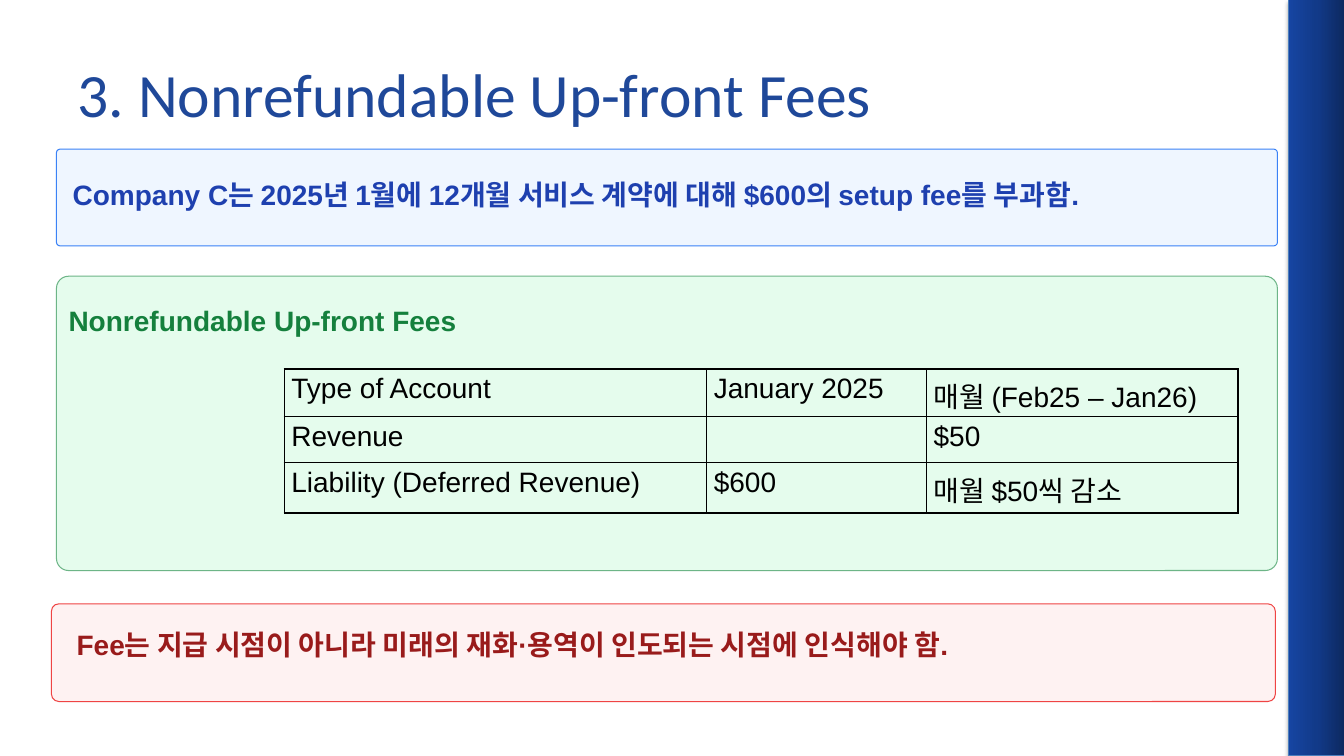
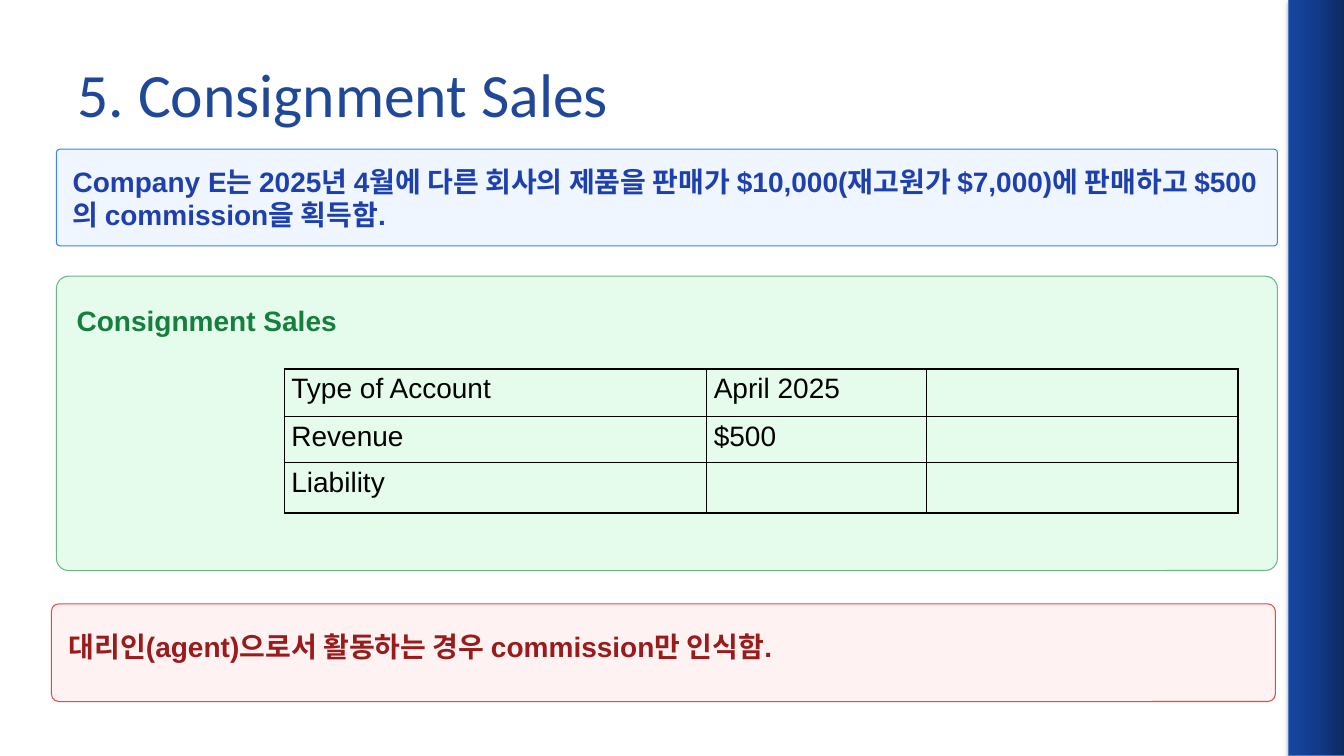
"""Build two slides on revenue recognition cases."""
from copy import deepcopy

from lxml import etree
from pptx import Presentation
from pptx.dml.color import RGBColor
from pptx.enum.shapes import MSO_SHAPE
from pptx.enum.text import MSO_ANCHOR
from pptx.oxml import parse_xml
from pptx.util import Pt

RECT, ROUND = MSO_SHAPE.RECTANGLE, MSO_SHAPE.ROUNDED_RECTANGLE
TOP, MIDDLE = MSO_ANCHOR.TOP, MSO_ANCHOR.MIDDLE
NS = "http://schemas.openxmlformats.org/drawingml/2006/main"
PX = 9144

THEME = {
    "title": {"name": "Calibri", "size": 44, "color": "1F4899", "bold": False},
    "fact": {"name": "Arial", "size": 20, "color": "1E40AF", "bold": True},
    "head": {"name": "Arial", "size": 20, "color": "15803D", "bold": True},
    "note": {"name": "Arial", "size": 20, "color": "991B1B", "bold": True},
    "cell": {"name": "Arial", "size": 20, "color": "000000", "bold": False},
    "bar": ("0D2960", "123A89", "1645A2"),
    "edge": "4B7EBC",
    "grid": "000000",
    "lead": Pt(22.4),
}

CARDS = [
    ((56, 148, 1211, 96), 0.037, "EFF6FF", "3B82F6"),
    ((56, 274, 1211, 292), 0.041, "E5FCED", "6DB587"),
    ((51, 599, 1214, 97), 0.078, "FEF2F2", "EF4444"),
]
COLS, ROWS = (419, 218, 309), (47, 46, 50)

SLIDES = [
    {
        "title": "3. Nonrefundable Up-front Fees",
        "texts": [
            ("fact", "Company C는 2025년 1월에 12개월 서비스 계약에 대해 $600의 setup fee를 부과함.",
             (72, 178, 1186, 34), THEME["lead"]),
            ("head", "Nonrefundable Up-front Fees", (68, 303, 1186, 34), THEME["lead"]),
            ("note", "Fee는 지급 시점이 아니라 미래의 재화·용역이 인도되는 시점에 인식해야 함.",
             (76, 625, 1175, 80), THEME["lead"]),
        ],
        "table": [
            ("Type of Account", "January 2025", "매월 (Feb25 – Jan26)"),
            ("Revenue", "", "$50"),
            ("Liability (Deferred Revenue)", "$600", "매월 $50씩 감소"),
        ],
    },
    {
        "title": "5. Consignment Sales",
        "texts": [
            ("fact", "Company E는 2025년 4월에 다른 회사의 제품을 판매가 $10,000(재고원가 $7,000)에 "
             "판매하고 $500의 commission을 획득함.", (72, 163, 1186, 96), None),
            ("head", "Consignment Sales", (76, 303, 1178, 34), THEME["lead"]),
            ("note", "대리인(agent)으로서 활동하는 경우 commission만 인식함.",
             (68, 625, 1183, 80), None),
        ],
        "table": [
            ("Type of Account", "April 2025", ""),
            ("Revenue", "$500", ""),
            ("Liability", "", ""),
        ],
    },
]


def rgb(code):
    return RGBColor.from_string(code)


def scale(box):
    return [n * PX for n in box]


def style(font, look):
    values = {"name": look["name"], "size": Pt(look["size"]), "bold": look["bold"]}
    for key, value in values.items():
        setattr(font, key, value)
    font.color.rgb = rgb(look["color"])


def write(para, text, look, **form):
    for key, value in form.items():
        setattr(para, key, value)
    if text:
        run = para.add_run()
        run.text = text
        style(run.font, look)


def label(slide, text, box, look, lead=None, pad=(0, 0), anchor=TOP):
    frame = slide.shapes.add_textbox(*scale(box)).text_frame
    side, end = (n * PX for n in pad)
    form = {"word_wrap": True, "vertical_anchor": anchor, "margin_left": side,
            "margin_right": side, "margin_top": end, "margin_bottom": end}
    for key, value in form.items():
        setattr(frame, key, value)
    write(frame.paragraphs[0], text, look, line_spacing=lead)


def panel(slide, kind, box, edge):
    shape = slide.shapes.add_shape(kind, *scale(box))
    shape.shadow.inherit = False
    shape.line.color.rgb = rgb(edge)
    shape.line.width = Pt(0.75)
    return shape


def side_bar(slide):
    bar = panel(slide, RECT, (1278, 0, 56, 750), THEME["edge"])
    bar.fill.gradient()
    bar.fill.gradient_angle = 180
    stops = bar.fill.gradient_stops
    first = bar._element.find(f".//{{{NS}}}gs")
    first.addnext(deepcopy(first))
    stops = bar.fill.gradient_stops
    for stop, place, code in zip(stops, (0, 0.5, 1), THEME["bar"]):
        stop.position = place
        stop.color.rgb = rgb(code)
    glow = bar._element.spPr.find(f"{{{NS}}}effectLst")
    glow.append(parse_xml(
        f'<a:outerShdw xmlns:a="{NS}" blurRad="{Pt(3.1)}" dist="{Pt(1.8)}" dir="5400000" '
        'rotWithShape="0"><a:srgbClr val="000000"><a:alpha val="35000"/></a:srgbClr>'
        '</a:outerShdw>'))


def border(cell):
    props = cell._tc.get_or_add_tcPr()
    for spot, side in enumerate(("lnL", "lnR", "lnT", "lnB")):
        line = etree.Element(f"{{{NS}}}{side}", w=str(Pt(1)))
        fill = etree.SubElement(line, f"{{{NS}}}solidFill")
        etree.SubElement(fill, f"{{{NS}}}srgbClr", val=THEME["grid"])
        props.insert(spot, line)


def ledger(slide, data):
    box = (282, 366, sum(COLS), sum(ROWS))
    table = slide.shapes.add_table(len(ROWS), len(COLS), *scale(box)).table
    table.first_row = table.horz_banding = False
    for col, width in zip(table.columns, COLS):
        col.width = width * PX
    for row, height, texts in zip(table.rows, ROWS, data):
        row.height = height * PX
        for cell, text in zip(row.cells, texts):
            cell.margin_left = cell.margin_right = 7 * PX
            cell.margin_top = cell.margin_bottom = 0
            cell.fill.background()
            border(cell)
            write(cell.text_frame.paragraphs[0], text, THEME["cell"],
                  line_spacing=1.15, space_after=Pt(10))


def build(deck, page):
    slide = deck.slides.add_slide(deck.slide_layouts[6])
    side_bar(slide)
    label(slide, page["title"], (67, 30, 1200, 125), THEME["title"],
          pad=(10, 5), anchor=MIDDLE)
    for box, bend, fill, edge in CARDS:
        card = panel(slide, ROUND, box, edge)
        card.adjustments[0] = bend
        card.fill.solid()
        card.fill.fore_color.rgb = rgb(fill)
    ledger(slide, page["table"])
    for role, text, box, lead in page["texts"]:
        label(slide, text, box, THEME[role], lead)


def main():
    deck = Presentation()
    deck.slide_width, deck.slide_height = scale((1333, 750))
    for page in SLIDES:
        build(deck, page)
    deck.save("out.pptx")


if __name__ == "__main__":
    main()
